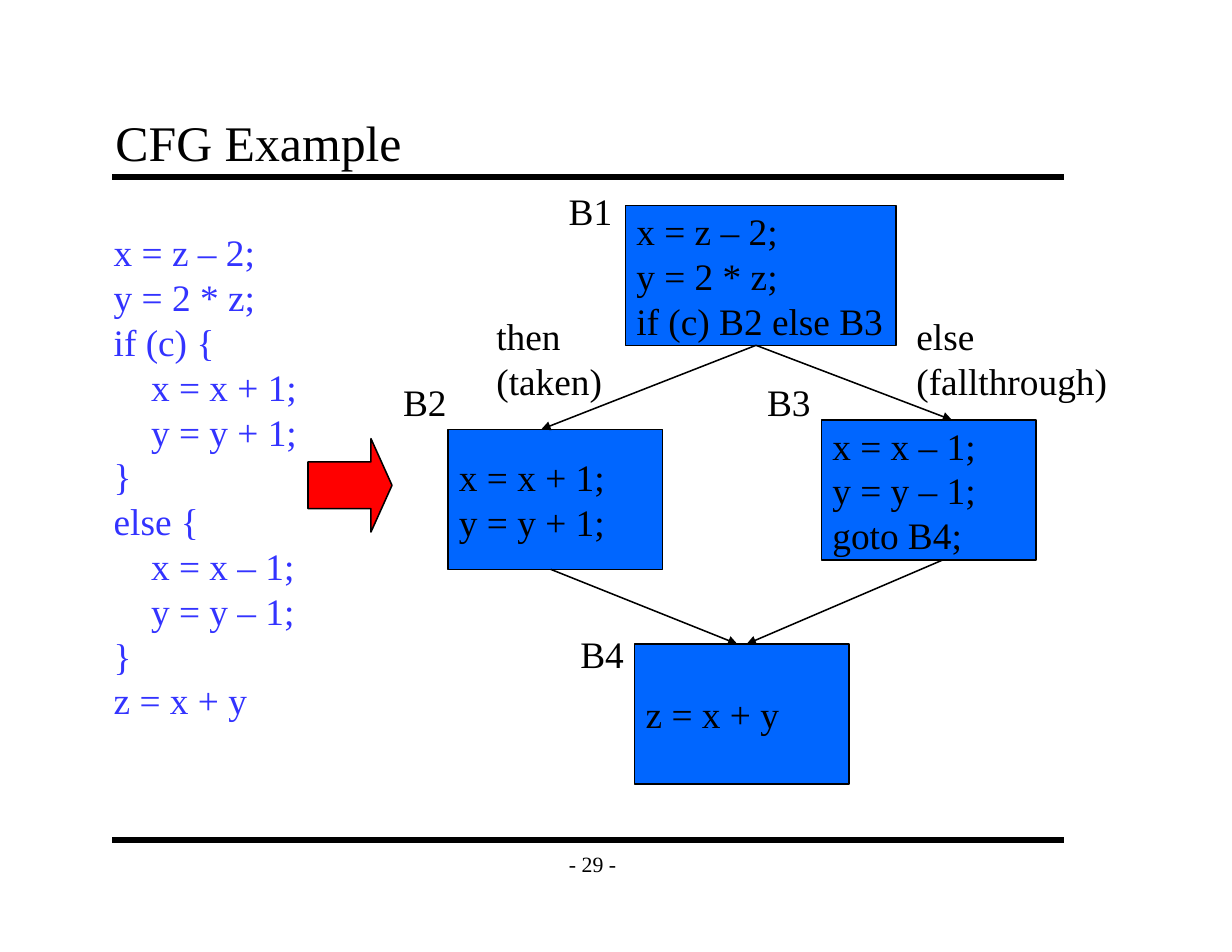
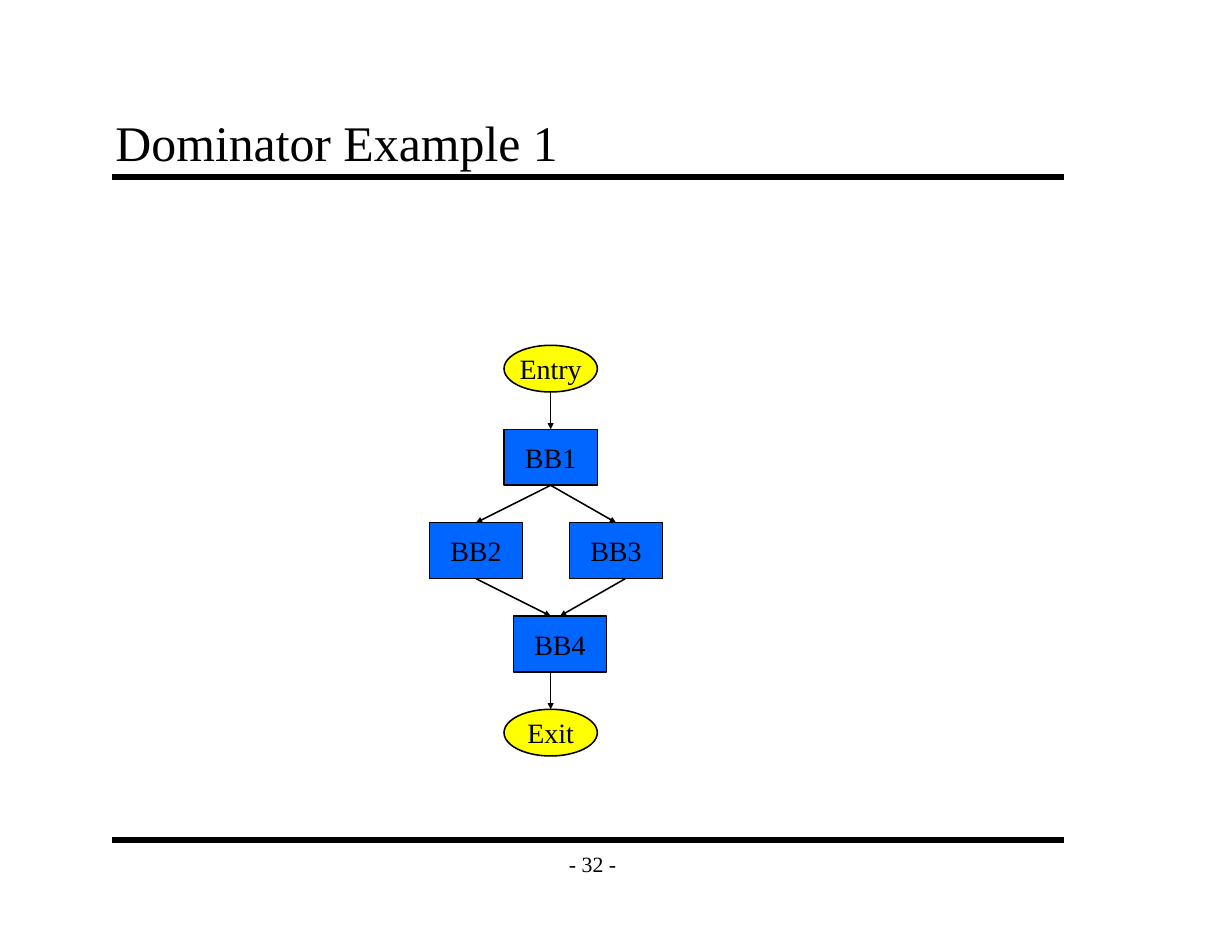
from dataclasses import dataclass

from lxml import etree
from pptx import Presentation
from pptx import util as u
from pptx.dml.color import RGBColor
from pptx.enum import shapes, text
from pptx.oxml import ns

PX = 9525  # EMU per px, 96 px to the inch
FONT = "Times New Roman"
BLACK = RGBColor(0x00, 0x00, 0x00)
BLOCK_BLUE = RGBColor(0x00, 0x66, 0xFF)
CODE_BLUE = RGBColor(0x33, 0x33, 0xFF)
YELLOW = RGBColor(0xFF, 0xFF, 0x00)
RED = RGBColor(0xFF, 0x00, 0x00)

RECT = shapes.MSO_SHAPE.RECTANGLE
OVAL = shapes.MSO_SHAPE.OVAL
LEFT, CENTER = text.PP_ALIGN.LEFT, text.PP_ALIGN.CENTER
TOP, MIDDLE, BOTTOM = text.MSO_ANCHOR.TOP, text.MSO_ANCHOR.MIDDLE, text.MSO_ANCHOR.BOTTOM
TOP_SITE, BOTTOM_SITE = 0, 2

RULE_LEFT, RULE_RIGHT = 96, 912
RULE_TOPS = (152, 720)
INDENT = 32


@dataclass(frozen=True)
class Style:
    size: int
    color: RGBColor = BLACK
    align: int = LEFT
    anchor: int = MIDDLE
    wrap: bool = False
    inset: tuple[int, int] | None = None


@dataclass(frozen=True)
class Node:
    """A flow-graph block; each text line is a paragraph."""
    x: int
    y: int
    w: int
    h: int
    lines: tuple[str, ...] = ()
    kind: int = RECT
    fill: RGBColor = BLOCK_BLUE


@dataclass(frozen=True)
class Label:
    x: int
    y: int
    w: int
    h: int
    lines: tuple[str, ...]


@dataclass(frozen=True)
class Edge:
    x1: int
    y1: int
    x2: int
    y2: int


TITLE = Style(32, anchor=BOTTOM, wrap=True, inset=(11, 5))
FOOTER = Style(14, align=CENTER, inset=(11, 6))
CODE = Style(24, CODE_BLUE, anchor=TOP)
LABEL = Style(24, anchor=TOP)
CODE_BLOCK = Style(24)
NAMED_BLOCK = Style(18, align=CENTER)


def write(shape, lines: tuple[str, ...], style: Style) -> None:
    """Fill a shape with paragraphs; a leading tab indents a line."""
    tf = shape.text_frame
    tf.word_wrap = style.wrap
    tf.vertical_anchor = style.anchor
    if style.inset:
        tf.margin_left = tf.margin_right = style.inset[0] * PX
        tf.margin_top = tf.margin_bottom = style.inset[1] * PX
    for i, line in enumerate(lines):
        p = tf.add_paragraph() if i else tf.paragraphs[0]
        p.alignment = style.align
        if line.startswith("\t"):
            p._p.get_or_add_pPr().set("marL", str(INDENT * PX))
        r = p.add_run()
        r.text = line.lstrip("\t")
        r.font.name = FONT
        r.font.size = u.Pt(style.size)
        r.font.color.rgb = style.color


def add_text(s, label: Label, style: Style, grow: bool = False) -> None:
    tb = s.shapes.add_textbox(label.x * PX, label.y * PX, label.w * PX, label.h * PX)
    write(tb, label.lines, style)
    if grow:
        tb.text_frame.auto_size = text.MSO_AUTO_SIZE.SHAPE_TO_FIT_TEXT


def add_node(s, node: Node, style: Style):
    sp = s.shapes.add_shape(node.kind, node.x * PX, node.y * PX, node.w * PX, node.h * PX)
    sp.shadow.inherit = False
    sp.fill.solid()
    sp.fill.fore_color.rgb = node.fill
    sp.line.color.rgb = BLACK
    sp.line.width = u.Pt(1)
    write(sp, node.lines, style)
    return sp


def add_line(s, edge: Edge, width: int):
    line = s.shapes.add_connector(shapes.MSO_CONNECTOR.STRAIGHT, edge.x1 * PX, edge.y1 * PX,
                                  edge.x2 * PX, edge.y2 * PX)
    line.line.color.rgb = BLACK
    line.line.width = u.Pt(width)
    etree.SubElement(line._element.spPr, ns.qn("a:effectLst"))
    return line


def add_arrow(s, edge: Edge, blocks: list, head: str) -> None:
    """Draw an arrow, joined to each rectangle whose side it meets in the middle."""
    line = add_line(s, edge, 1)
    etree.SubElement(line.line._get_or_add_ln(), ns.qn("a:tailEnd"),
                     type="triangle", w=head, len=head)
    start, end = (edge.x1 * PX, edge.y1 * PX), (edge.x2 * PX, edge.y2 * PX)
    for sp in blocks:
        if sp.auto_shape_type != RECT:
            continue
        middle = sp.left + sp.width // 2
        if start == (middle, sp.top + sp.height):
            line.begin_connect(sp, BOTTOM_SITE)
        if end == (middle, sp.top):
            line.end_connect(sp, TOP_SITE)


def add_graph(s, nodes: list[Node], edges: list[Edge], style: Style, head: str) -> None:
    blocks = [add_node(s, node, style) for node in nodes]
    for edge in edges:
        add_arrow(s, edge, blocks, head)


def add_slide(prs, title: str, number: int):
    """Start a slide with its title, two rules and page number."""
    s = prs.slides.add_slide(prs.slide_layouts[6])
    for y in RULE_TOPS:
        add_line(s, Edge(RULE_LEFT, y, RULE_RIGHT, y), 4)
    add_text(s, Label(472, 720, 72, 40, (f"- {number} -",)), FOOTER)
    add_text(s, Label(88, 88, 816, 64, (title,)), TITLE)
    return s


def add_cfg_slide(prs) -> None:
    s = add_slide(prs, "CFG Example", 29)
    source = ("x = z – 2;", "y = 2 * z;", "if (c) {", "\tx = x + 1;", "\ty = y + 1;", "}",
              "else {", "\tx = x – 1;", "\ty = y – 1;", "}", "z = x + y")
    add_text(s, Label(88, 192, 177, 431, source), CODE, grow=True)

    nodes = [
        Node(536, 176, 232, 120, ("x = z – 2;", "y = 2 * z;", "if (c) B2 else B3")),
        Node(384, 368, 184, 120, ("x = x + 1;", "y = y + 1;")),
        Node(544, 552, 184, 120, ("z = x + y",)),
        Node(704, 360, 184, 120, ("x = x – 1;", "y = y – 1;", "goto B4;")),
    ]
    edges = [Edge(648, 296, 464, 368), Edge(648, 296, 816, 360),
             Edge(472, 488, 632, 552), Edge(808, 480, 640, 552)]
    add_graph(s, nodes, edges, CODE_BLOCK, "med")

    labels = [Label(416, 264, 112, 86, ("then", "(taken)")),
              Label(776, 264, 186, 86, ("else", "(fallthrough)"))]
    block_names = {"B1": (478, 157), "B2": (336, 320), "B3": (648, 320), "B4": (488, 536)}
    labels += [Label(x, y, 58, 48, (name,)) for name, (x, y) in block_names.items()]
    for label in labels:
        add_text(s, label, LABEL, grow=True)

    arrow = add_node(s, Node(264, 376, 72, 80, kind=shapes.MSO_SHAPE.RIGHT_ARROW, fill=RED),
                     CODE_BLOCK)
    arrow.adjustments[0], arrow.adjustments[1] = 0.5, 0.25


def add_dominator_slide(prs) -> None:
    s = add_slide(prs, "Dominator Example 1", 32)
    places = {"BB1": (432, 368), "BB2": (368, 448), "BB4": (440, 528), "BB3": (488, 448)}
    nodes = [Node(x, y, 80, 48, (name,)) for name, (x, y) in places.items()]
    nodes += [Node(432, y, 80, 40, (name,), OVAL, YELLOW)
              for name, y in (("Entry", 296), ("Exit", 608))]
    edges = [Edge(472, 416, 528, 448), Edge(472, 416, 408, 448),
             Edge(408, 496, 472, 528), Edge(536, 496, 480, 528),
             Edge(472, 336, 472, 368), Edge(472, 576, 472, 608)]
    add_graph(s, nodes, edges, NAMED_BLOCK, "sm")


def main() -> None:
    prs = Presentation()
    prs.slide_width, prs.slide_height = 1056 * PX, 816 * PX
    add_cfg_slide(prs)
    add_dominator_slide(prs)
    prs.save("out.pptx")


if __name__ == "__main__":
    main()
